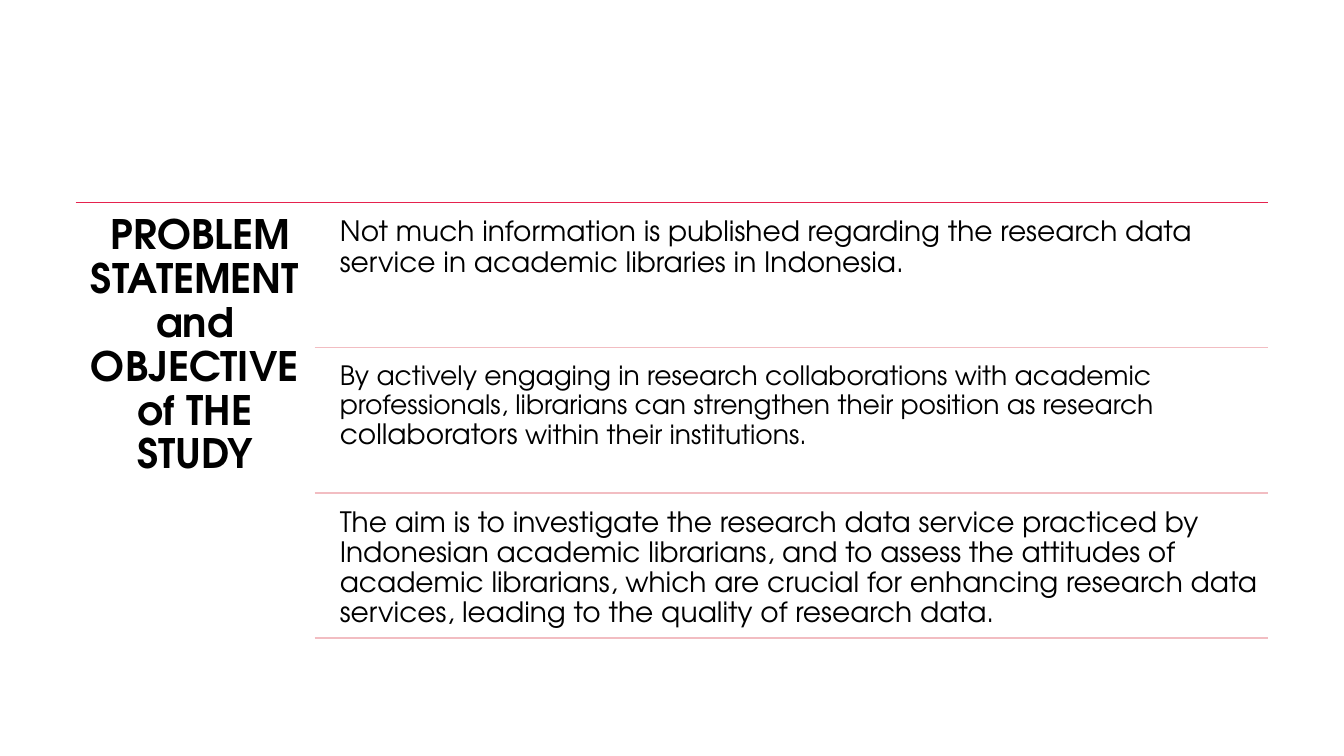
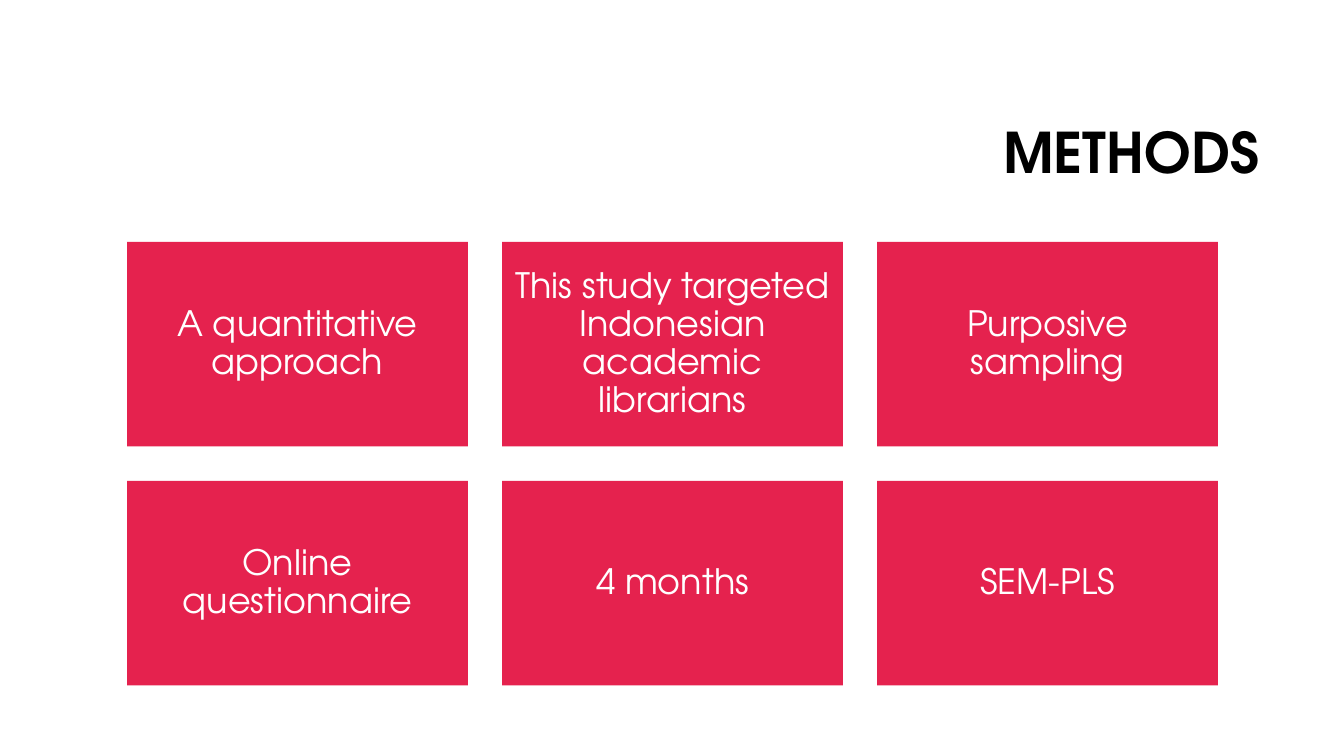
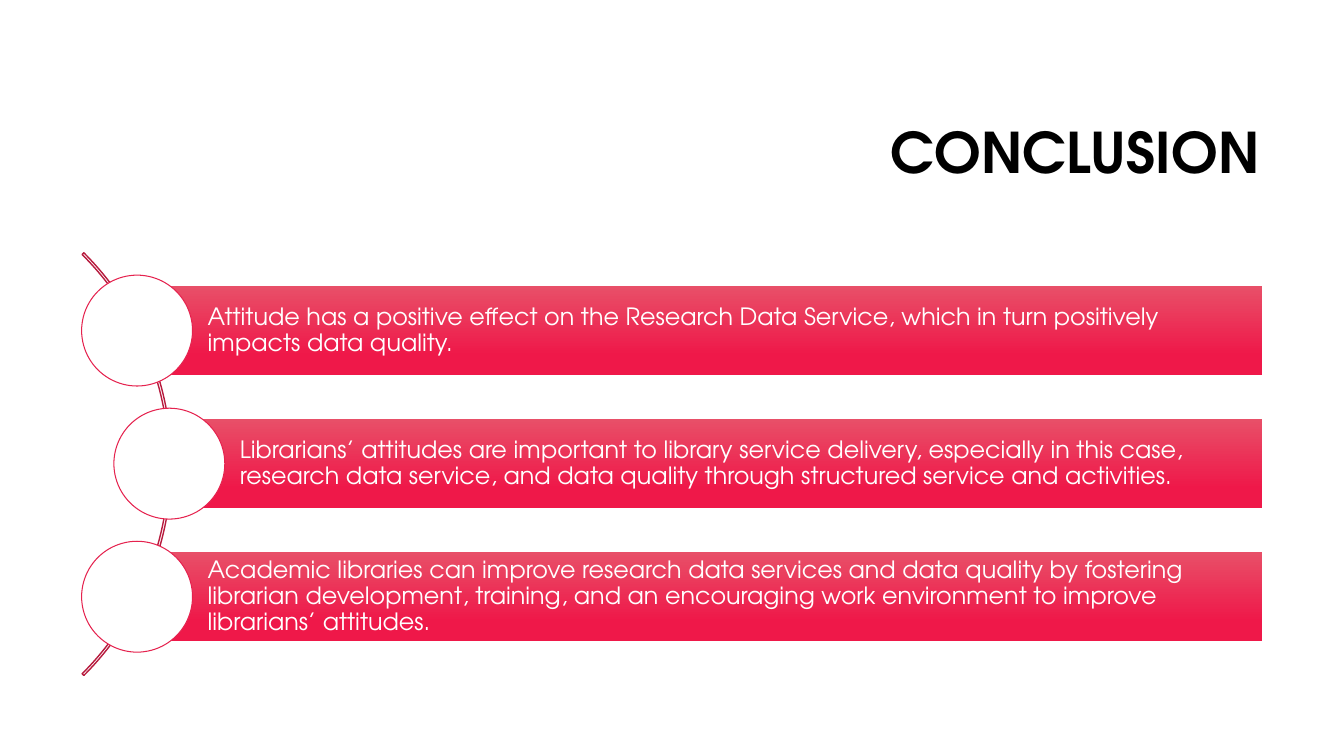
from lxml import etree
from pptx import Presentation
from pptx.dml.color import RGBColor
from pptx.enum.shapes import MSO_CONNECTOR, MSO_SHAPE
from pptx.enum.text import MSO_ANCHOR, PP_ALIGN
from pptx.oxml.ns import qn
from pptx.util import Inches, Pt

LEFT, CENTER, RIGHT = PP_ALIGN.LEFT, PP_ALIGN.CENTER, PP_ALIGN.RIGHT
TOP, MIDDLE = MSO_ANCHOR.TOP, MSO_ANCHOR.MIDDLE
RECTANGLE, OVAL, ARC = MSO_SHAPE.RECTANGLE, MSO_SHAPE.OVAL, MSO_SHAPE.BLOCK_ARC
STRAIGHT = MSO_CONNECTOR.STRAIGHT

FONT = "TeX Gyre Adventor"
BLACK, WHITE = "000000", "FFFFFF"
CRIMSON, PINK, DARK_RED = "E5224E", "F2BDC2", "B71B3E"
BAR_TOP_COLOR, BAR_BOTTOM_COLOR = "E84F68", "EF1849"


def rgb(color):
    return RGBColor.from_string(color)


def write(shape, texts, size, color=BLACK, align=LEFT, anchor=MIDDLE,
          bold=False, inset=0.1, left_inset=None):
    """Fill a shape with one paragraph, one run per text, and return the paragraph."""
    frame = shape.text_frame
    frame.word_wrap = True
    frame.vertical_anchor = anchor
    frame.margin_left = Inches(inset if left_inset is None else left_inset)
    frame.margin_right = frame.margin_top = frame.margin_bottom = Inches(inset)
    paragraph = frame.paragraphs[0]
    paragraph.alignment = align
    paragraph.line_spacing = 0.9
    for text in texts:
        paragraph.add_run().text = text
    paragraph.font.name = FONT
    paragraph.font.size = Pt(size)
    paragraph.font.bold = bold
    paragraph.font.color.rgb = rgb(color)
    return paragraph


prs = Presentation()
prs.slide_width, prs.slide_height = Inches(13.33), Inches(7.5)
blank = prs.slide_layouts[6]
problem, methods, conclusion = [prs.slides.add_slide(blank) for _ in range(3)]

for slide, heading in ((methods, "METHODS"), (conclusion, "CONCLUSION")):
    title = slide.shapes.add_textbox(Inches(3.17), Inches(0.84), Inches(9.42), Inches(1.41))
    write(title, [heading], 40, align=RIGHT, bold=True)

# Problem statement: a heading column beside three ruled rows
TABLE_LEFT, TABLE_RIGHT, TABLE_TOP = 0.75, 12.58, 2.01
HEADING_WIDTH, ROW_HEIGHT = 2.37, 1.44
STATEMENT_INDENT, STATEMENT_DROP = 0.17, 0.07
row_left = TABLE_LEFT + HEADING_WIDTH
statement_left = row_left + STATEMENT_INDENT
statements = [
    (20, ["Not much information is published regarding the research data service in "
          "academic libraries in Indonesia."]),
    (19, ["By actively engaging in research collaborations with academic professionals, "
          "librarians can strengthen their position as research ",
          "collaborators", " within their institutions."]),
    (20, ["The aim is to investigate the research data service practiced by Indonesian "
          "academic librarians, and to assess the attitudes of academic librarians, which "
          "are crucial for enhancing research data services, leading to the quality of "
          "research data."]),
]

for row in range(len(statements) + 1):
    start, color = (row_left, PINK) if row else (TABLE_LEFT, CRIMSON)
    y = Inches(TABLE_TOP + row * ROW_HEIGHT)
    rule = problem.shapes.add_connector(STRAIGHT, Inches(start), y, Inches(TABLE_RIGHT), y)
    rule.line.color.rgb = rgb(color)
    rule.line.width = Pt(1)
    etree.SubElement(rule._element.spPr, qn("a:effectLst"))

heading = problem.shapes.add_textbox(Inches(TABLE_LEFT), Inches(TABLE_TOP),
                                     Inches(HEADING_WIDTH), Inches(4.4))
write(heading, [" PROBLEM STATEMENT and OBJECTIVE of THE STUDY"], 29,
      align=CENTER, anchor=TOP, bold=True, inset=0.12)

for row, (size, texts) in enumerate(statements):
    statement = problem.shapes.add_textbox(
        Inches(statement_left), Inches(TABLE_TOP + row * ROW_HEIGHT + STATEMENT_DROP),
        Inches(TABLE_RIGHT - statement_left), Inches(1.37))
    paragraph = write(statement, texts, size, anchor=TOP, inset=0.08)
    for emphasis in paragraph.runs[1:2]:
        emphasis.font.size = Pt(20)

# Methods: a grid of cards
CARD_WIDTH, CARD_HEIGHT, CARD_GAP = 3.38, 2.03, 0.34
GRID_LEFT, GRID_TOP, COLUMNS = 1.26, 2.4, 3
steps = ["A quantitative approach", "This study targeted Indonesian academic librarians",
         "Purposive sampling", "Online questionnaire", "4 months", "SEM-PLS"]

for index, step in enumerate(steps):
    row, column = divmod(index, COLUMNS)
    card = methods.shapes.add_shape(
        RECTANGLE, Inches(GRID_LEFT + column * (CARD_WIDTH + CARD_GAP)),
        Inches(GRID_TOP + row * (CARD_HEIGHT + CARD_GAP)),
        Inches(CARD_WIDTH), Inches(CARD_HEIGHT))
    card.shadow.inherit = False
    card.fill.solid()
    card.fill.fore_color.rgb = rgb(CRIMSON)
    card.line.fill.background()
    write(card, [step], 25, WHITE, CENTER)

# Conclusion: bars strung along an arc
BAR_RIGHT, BAR_TOP, BAR_HEIGHT, BAR_PITCH = 12.52, 2.84, 0.88, 1.32
DIAMETER, ARC_SIZE = 1.1, 5.93
findings = [
    (1.36, "Attitude has a positive effect on the Research Data Service, which in turn "
           "positively impacts data quality."),
    (1.68, "Librarians’ attitudes are important to library service delivery, especially in "
           "this case, research data service, and data quality through structured service "
           "and activities."),
    (1.36, "Academic libraries can improve research data services and data quality by "
           "fostering librarian development, training, and an encouraging work environment "
           "to improve librarians’ attitudes."),
]

arc = conclusion.shapes.add_shape(ARC, Inches(-4.23), Inches(1.64),
                                  Inches(ARC_SIZE), Inches(ARC_SIZE))
arc.shadow.inherit = False
arc.fill.background()
arc.line.color.rgb = rgb(DARK_RED)
arc.line.width = Pt(1)
for index, value in enumerate((189, 27, 0.004)):
    arc.adjustments[index] = value

for row, (bar_left, finding) in enumerate(findings):
    bar_top = BAR_TOP + row * BAR_PITCH
    bar = conclusion.shapes.add_shape(RECTANGLE, Inches(bar_left), Inches(bar_top),
                                      Inches(BAR_RIGHT - bar_left), Inches(BAR_HEIGHT))
    bar.shadow.inherit = False
    bar.fill.gradient()
    bar.fill.gradient_angle = 270
    stops = ((0, BAR_TOP_COLOR), (0.78, BAR_BOTTOM_COLOR))
    for stop, (position, color) in zip(bar.fill.gradient_stops, stops):
        stop.position = position
        stop.color.rgb = rgb(color)
    bar.line.fill.background()
    write(bar, [finding], 17, WHITE, inset=0.05, left_inset=0.7)

    marker = conclusion.shapes.add_shape(
        OVAL, Inches(bar_left - DIAMETER / 2),
        Inches(bar_top + (BAR_HEIGHT - DIAMETER) / 2), Inches(DIAMETER), Inches(DIAMETER))
    marker.shadow.inherit = False
    marker.fill.solid()
    marker.fill.fore_color.rgb = rgb(WHITE)
    marker.line.color.rgb = rgb(CRIMSON)
    marker.line.width = Pt(0.75)

prs.save("out.pptx")
